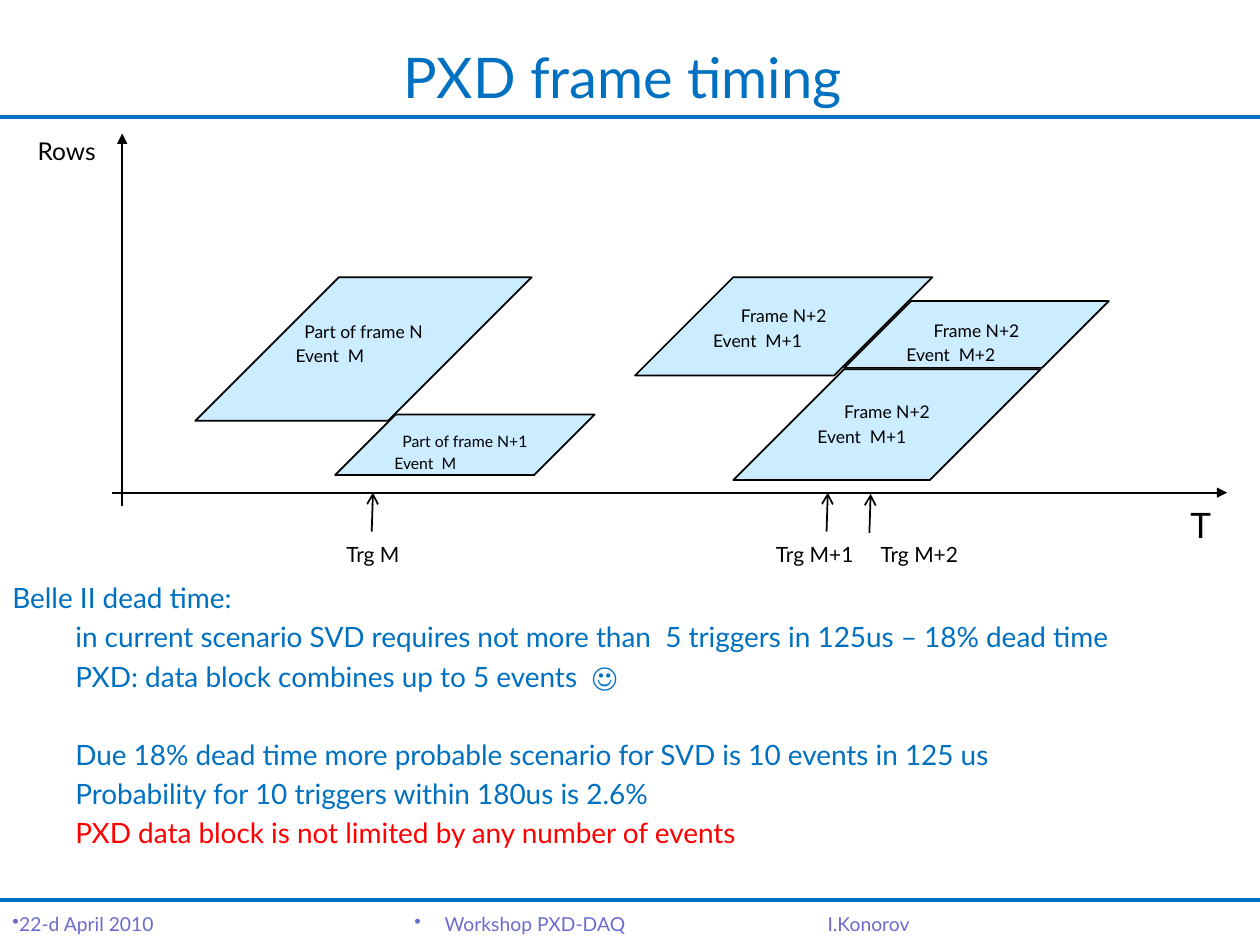
import pptx
import pptx.util
import pptx.dml.color
import pptx.enum.shapes
import pptx.enum.text
import pptx.oxml
import pptx.oxml.ns
import lxml.etree

Inches = pptx.util.Inches
Pt = pptx.util.Pt
Align = pptx.enum.text.PP_ALIGN
Anchor = pptx.enum.text.MSO_ANCHOR
qn = pptx.oxml.ns.qn

COLORS = {
    "blue": "0070C0",
    "black": "000000",
    "red": "FF0000",
    "pale": "CCECFF",
    "violet": "6B6BCF",
}


def color(name):
    return pptx.dml.color.RGBColor.from_string(COLORS[name])


def indent(para, left, first=0, bullet=None):
    """Set margin and first-line indent in inches, with an optional bullet."""
    props = para._p.get_or_add_pPr()
    props.set("marL", str(Inches(left)))
    props.set("indent", str(Inches(first)))
    if bullet:
        lxml.etree.SubElement(props, qn("a:buChar")).set("char", bullet)


class Page:
    """Holds the font and the slide that elements are drawn on."""

    def __init__(self, slide, font="Lato"):
        self.slide = slide
        self.font = font

    def style(self, para, size, ink, gap=0.2):
        """Format the runs; the gap above is a share of the text size."""
        para.space_before = Pt(round(size * gap, 1))
        for run in para.runs:
            run.font.name = self.font
            run.font.size = Pt(size)
            run.font.color.rgb = color(ink)

    def text(self, box, words, size, ink="black", wrap=False):
        shape = self.slide.shapes.add_textbox(*map(Inches, box))
        frame = shape.text_frame
        frame.word_wrap = wrap
        frame.text = words
        for para in frame.paragraphs:
            self.style(para, size, ink)
        return frame

    def line(self, start, end, ink="black", width=1, head=None):
        link = self.slide.shapes.add_connector(
            pptx.enum.shapes.MSO_CONNECTOR.STRAIGHT, *map(Inches, start + end))
        link.line.color.rgb = color(ink)
        link.line.width = Pt(width)
        if head:
            stroke = link.line._get_or_add_ln()
            lxml.etree.SubElement(stroke, qn("a:tailEnd")).set("type", head)
        lxml.etree.SubElement(link._element.spPr, qn("a:effectLst"))

    def block(self, box, frame_name, event, size=10):
        """Draw a slanted block with its frame and event."""
        shape = self.slide.shapes.add_shape(
            pptx.enum.shapes.MSO_SHAPE.PARALLELOGRAM, *map(Inches, box))
        shape.adjustments[0] = 1
        shape.shadow.inherit = False
        shape.fill.solid()
        shape.fill.fore_color.rgb = color("pale")
        shape.line.color.rgb = color("black")
        shape.line.width = Pt(1)
        frame = shape.text_frame
        frame.vertical_anchor = Anchor.TOP
        frame.text = f"{frame_name}\n{event}"
        for para, align in zip(frame.paragraphs, (Align.CENTER, Align.LEFT)):
            para.alignment = align
            indent(para, 0.38, -0.38)
            self.style(para, size, "black")


BLOCKS = [
    ((1.55, 2.2, 2.67, 1.14), "Part of frame N", "Event  M", 10),
    ((5.04, 2.2, 2.36, 0.78), "Frame N+2", "Event  M+1", 10),
    ((2.66, 3.29, 2.06, 0.48), "Part of frame N+1", "Event  M", 9),
    ((5.82, 2.93, 2.44, 0.88), "Frame N+2", "Event  M+1", 10),
    ((6.7, 2.39, 2.1, 0.53), "Frame N+2", "Event  M+2", 10),
]
# label, arrow foot, label left, label width
TRIGGERS = [
    ("Trg M", (2.95, 4.22), 2.65, 0.64),
    ("Trg M+1", (6.56, 4.22), 6.06, 0.83),
    ("Trg M+2", (6.9, 4.23), 6.89, 0.83),
]
NOTES = [
    "Belle II dead time:",
    "in current scenario SVD requires not more than  5 triggers in 125us – 18% dead time",
    "PXD: data block combines up to 5 events  ☺",
    "Due 18% dead time more probable scenario for SVD is 10 events in 125 us",
    "Probability for 10 triggers within 180us is 2.6%",
    "PXD data block is not limited by any number of events",
]
# text, left, width, hanging indent, bullet
FOOTER = [
    ("22-d April 2010", 0, 1.33, 0, "•"),
    ("Workshop PXD-DAQ", 3.19, 2.5, 0.24, "•"),
    ("I.Konorov", 6.47, 1.5, 0, None),
]


def main():
    deck = pptx.Presentation()
    deck.slide_width, deck.slide_height = Inches(10), Inches(7.5)
    page = Page(deck.slides.add_slide(deck.slide_layouts[6]))

    for y in (0.93, 7.14):
        page.line((0, y), (10, y), "blue", 2.25)
    title = page.text((0.39, 0.3, 9.11, 0.61), "PXD frame timing", 32, "blue", True)
    title.vertical_anchor = Anchor.MIDDLE
    title.paragraphs[0].alignment = Align.CENTER

    page.line((0.89, 3.91), (9.74, 3.91), head="triangle")
    page.line((0.97, 4.02), (0.97, 1.06), head="triangle")
    page.text((9.35, 3.95, 0.37, 0.44), "T", 20)
    page.text((0.2, 1.03, 0.69, 0.34), "Rows", 14)

    for block in BLOCKS:
        page.block(*block)
    for label, (x, y), left, width in TRIGGERS:
        page.line((x, y), (x + 0.01, y - 0.31), head="arrow")
        page.text((left, 4.25, width, 0.3), label, 12)

    notes = page.text((0, 4.56, 9.03, 2.31), "\n".join(NOTES), 16, "blue").paragraphs
    for para in notes[1:]:
        indent(para, 0.5)
    page.style(notes[3], 16, "blue", gap=1.6)
    page.style(notes[-1], 16, "red")

    for words, left, width, hang, bullet in FOOTER:
        foot = page.text((left, 7.19, width, 0.31), words, 11, "violet", True)
        indent(foot.paragraphs[0], hang, -hang, bullet)

    deck.save("out.pptx")


if __name__ == "__main__":
    main()
